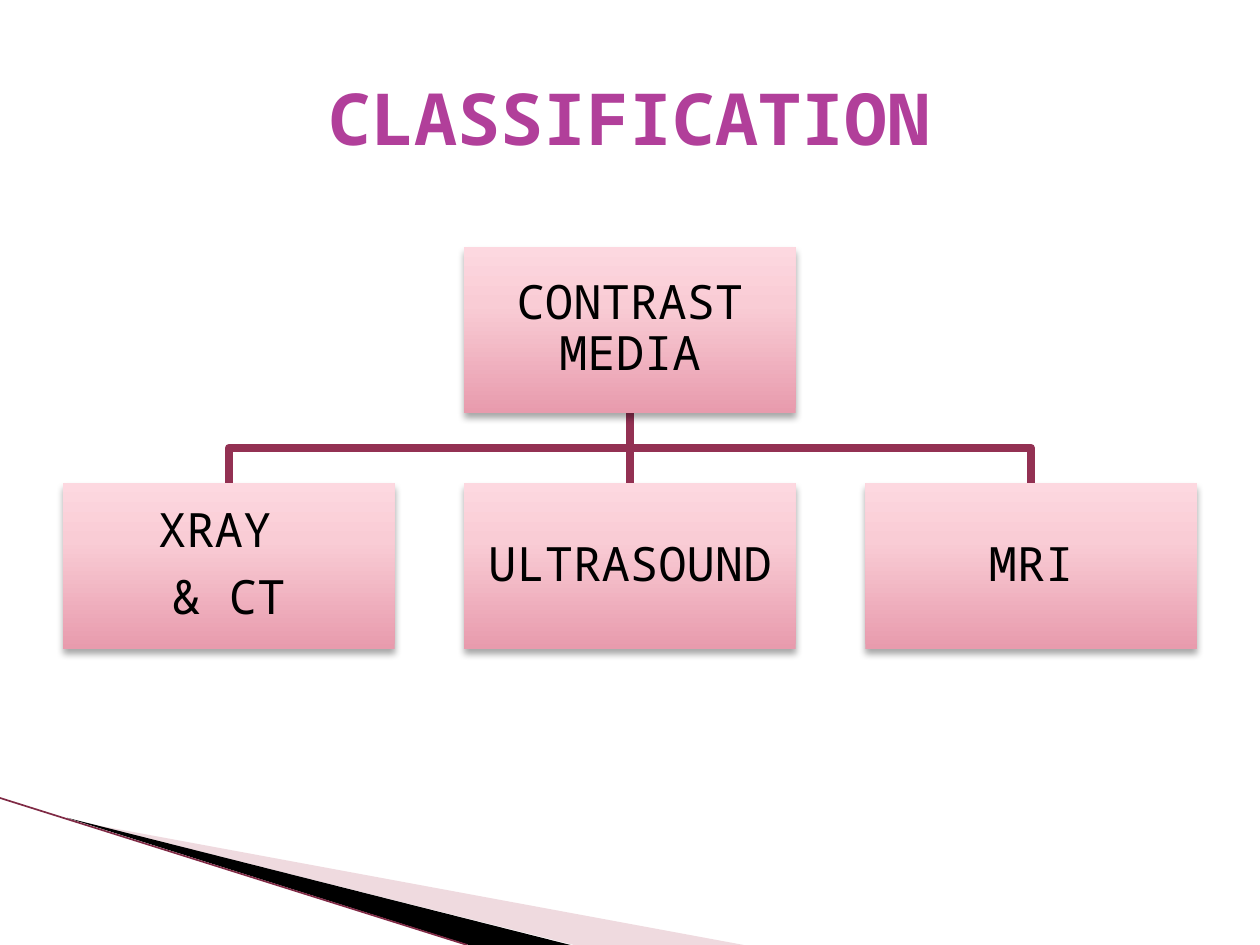
from dataclasses import dataclass

from lxml.etree import SubElement
from pptx import Presentation
from pptx.dml.color import RGBColor
from pptx.enum.shapes import MSO_CONNECTOR, MSO_SHAPE
from pptx.enum.text import MSO_ANCHOR as Anchor, PP_ALIGN as Align
from pptx.oxml import parse_xml
from pptx.oxml.ns import nsdecls, qn
from pptx.util import Pt


@dataclass(frozen=True)
class Theme:
    font: str = "Noto Sans Mono"
    title: str = "B13F9A"
    text: str = "000000"
    link: str = "933153"
    wedge_light: str = "D8A3AF"
    wedge_dark: str = "000000"
    edge: str = "7F2A45"
    gradient: tuple = ((0, "E89BAD"), (65, "F9CCD5"), (100, "FDD8E0"))
    title_size: float = 41
    node_size: float = 27
    link_width: float = 4.33


@dataclass(frozen=True)
class Node:
    lines: tuple[str, ...]
    x: float  # centre
    y: float  # top


THEME = Theme()
BOX_W, BOX_H = 189.5, 94.75
CENTRE, STEP = 360, 229.2
ROOT_Y, CHILD_Y = 141.1, 275.9

ROOT = Node(("CONTRAST MEDIA",), CENTRE, ROOT_Y)
CHILDREN = [
    Node(lines, CENTRE + (i - 1) * STEP, CHILD_Y)
    for i, lines in enumerate([("XRAY ", "& CT"), ("ULTRASOUND",), ("MRI",)])
]


def rgb(value: str) -> RGBColor:
    return RGBColor.from_string(value)


def draw_path(shapes, points: list, close: bool):
    (x, y), *rest = [(Pt(px), Pt(py)) for px, py in points]
    builder = shapes.build_freeform(x, y)
    builder.add_line_segments(rest, close=close)
    s = builder.convert_to_shape()
    s.shadow.inherit = False
    return s


def draw_wedge(shapes, points: list, color: str, alpha: int = 100) -> None:
    s = draw_path(shapes, points, True)
    s.fill.solid()
    s.fill.fore_color.rgb = rgb(color)
    s.line.fill.background()
    if alpha < 100:
        clr = s._element.spPr.find(qn("a:solidFill"))[0]
        SubElement(clr, qn("a:alpha"), val=str(alpha * 1000))


def draw_edge(shapes, start: tuple, end: tuple) -> None:
    s = shapes.add_connector(MSO_CONNECTOR.STRAIGHT, *map(Pt, start + end))
    s.line.color.rgb = rgb(THEME.edge)
    s.line.width = Pt(0.95)
    SubElement(s._element.spPr, qn("a:effectLst"))


def draw_link(shapes, parent: Node, child: Node) -> None:
    top, bottom = parent.y + BOX_H, child.y
    points = [(parent.x, top), (child.x, bottom)]
    if parent.x != child.x:
        mid = (top + bottom) / 2
        points[1:1] = [(parent.x, mid), (child.x, mid)]
    s = draw_path(shapes, points, False)
    s.fill.background()
    s.line.color.rgb = rgb(THEME.link)
    s.line.width = Pt(THEME.link_width)
    SubElement(s.line._get_or_add_ln(), qn("a:round"))


def write_text(tf, lines: tuple, size: float, color: str, bold: bool = False) -> None:
    tf.word_wrap = True
    tf.vertical_anchor = Anchor.MIDDLE
    for i, line in enumerate(lines):
        p = tf.add_paragraph() if i else tf.paragraphs[0]
        p.text = line
        p.alignment = Align.CENTER
        p.font.name = THEME.font
        p.font.size = Pt(size)
        p.font.bold = bold
        p.font.color.rgb = rgb(color)


def draw_node(shapes, node: Node) -> None:
    s = shapes.add_shape(MSO_SHAPE.RECTANGLE, Pt(node.x - BOX_W / 2), Pt(node.y),
                         Pt(BOX_W), Pt(BOX_H))
    # Vertical gradient, darkest at the bottom
    stops = "".join(f'<a:gs pos="{pos * 1000}"><a:srgbClr val="{color}"/></a:gs>'
                    for pos, color in THEME.gradient)
    s._element.spPr.append(parse_xml(
        f'<a:gradFill {nsdecls("a")} rotWithShape="1"><a:gsLst>{stops}</a:gsLst>'
        '<a:lin ang="16200000" scaled="0"/></a:gradFill>'))
    s.line.fill.background()
    # Soft shadow below the box
    s._element.spPr.append(parse_xml(
        f'<a:effectLst {nsdecls("a")}><a:outerShdw blurRad="{Pt(4)}" dist="{Pt(3)}" '
        'dir="5400000" rotWithShape="0"><a:srgbClr val="000000">'
        '<a:alpha val="35000"/></a:srgbClr></a:outerShdw></a:effectLst>'))
    tf = s.text_frame
    tf.margin_left = tf.margin_right = tf.margin_top = tf.margin_bottom = Pt(1.4)
    write_text(tf, node.lines, THEME.node_size, THEME.text)
    for p in tf.paragraphs:
        p.line_spacing = 0.9
        p.space_after = Pt(THEME.node_size * 0.35)


def main() -> None:
    prs = Presentation()
    prs.slide_width, prs.slide_height = Pt(720), Pt(540)
    shapes = prs.slides.add_slide(prs.slide_layouts[6]).shapes

    # Corner decoration
    draw_wedge(shapes, [(39.6, 468.7), (425, 540), (328, 540), (39.6, 468)],
               THEME.wedge_light, 40)
    draw_wedge(shapes, [(38.2, 467.3), (326, 540), (268, 540)], THEME.wedge_dark)
    draw_edge(shapes, (0, 456), (267, 540))

    # Organisation chart
    for child in reversed(CHILDREN):
        draw_link(shapes, ROOT, child)
    for node in [ROOT, *CHILDREN]:
        draw_node(shapes, node)

    # Title
    s = shapes.add_textbox(Pt(36), Pt(21.6), Pt(648), Pt(90))
    write_text(s.text_frame, ("CLASSIFICATION",), THEME.title_size, THEME.title, True)

    prs.save("out.pptx")


if __name__ == "__main__":
    main()
